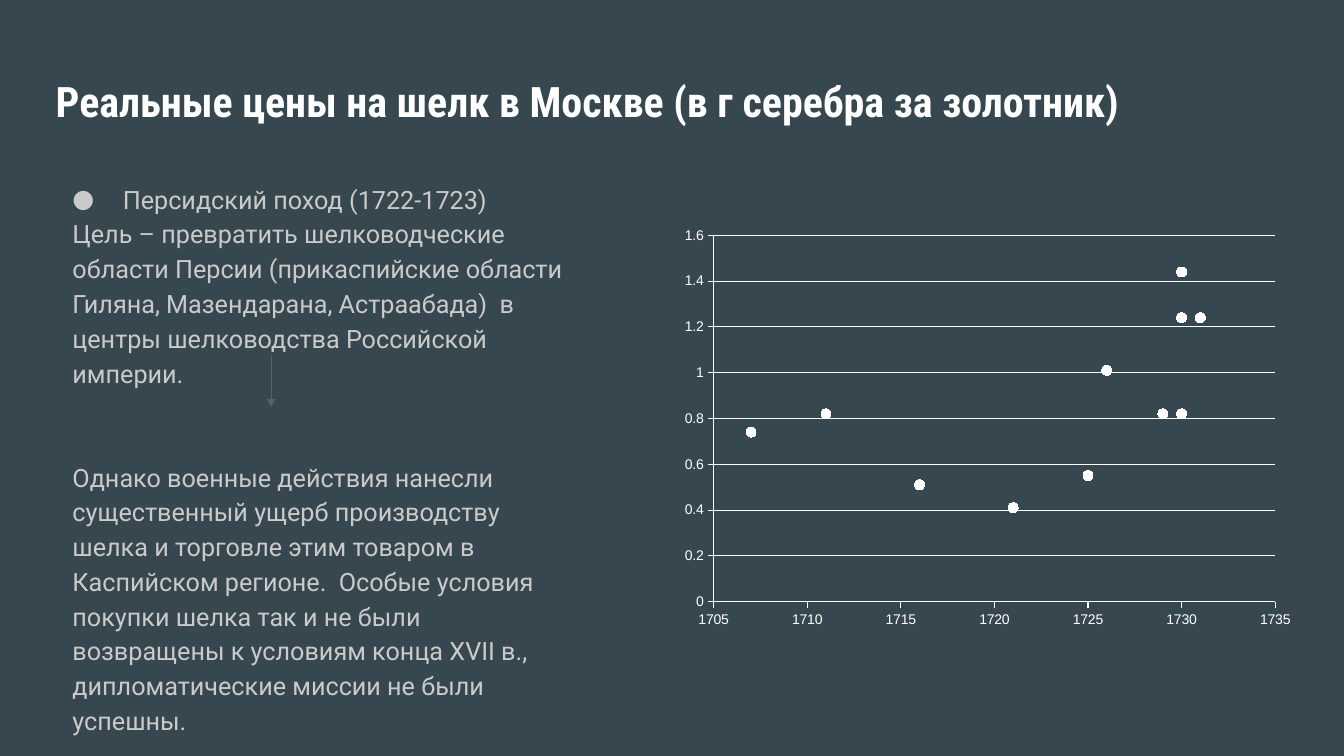
from lxml.etree import SubElement
from pptx import Presentation
from pptx.chart.data import XyChartData
from pptx.dml.color import RGBColor
from pptx.enum.chart import XL_CHART_TYPE, XL_MARKER_STYLE, XL_TICK_MARK
from pptx.enum.shapes import MSO_CONNECTOR
from pptx.oxml import parse_xml
from pptx.oxml.ns import nsdecls, qn
from pptx.util import Pt

COLORS = {"background": "37474F", "white": "FFFFFF", "body": "CACACA", "arrow": "5F5F5F"}

TITLE = "Реальные цены на шелк в Москве (в г серебра за золотник)"
CAMPAIGN = "Персидский поход (1722-1723)"
GOAL = ("Цель – превратить шелководческие области Персии (прикаспийские области "
        "Гиляна, Мазендарана, Астраабада)  в центры шелководства Российской империи.")
OUTCOME = ("Однако военные действия нанесли существенный ущерб производству шелка "
           "и торговле этим товаром в Каспийском регионе.  Особые условия покупки "
           "шелка так и не были возвращены к условиям конца XVII в., "
           "дипломатические миссии не были успешны.")
YEARS = range(1707, 1732)
PRICES = {
    "Series 1": {1707: 0.74, 1711: 0.82, 1716: 0.51, 1721: 0.41, 1725: 0.55,
                 1726: 1.01, 1729: 0.82, 1730: 0.82, 1731: 1.24},
    "Series 2": {1730: 1.24},
    "Series 3": {1730: 1.44},
}


def rgb(name):
    return RGBColor.from_string(COLORS[name])


class SlideBuilder:
    def __init__(self, prs):
        self.s = prs.slides.add_slide(prs.slide_layouts[6])
        fill = self.s.background.fill
        fill.solid()
        fill.fore_color.rgb = rgb("background")

    def text(self, box, paragraphs, font, size, color, bold=False, spacing=1.0):
        """Add a text box; each paragraph is (text, left margin, indent, space before, bullet)."""
        tf = self.s.shapes.add_textbox(*map(Pt, box)).text_frame
        tf.word_wrap = True
        tf.margin_left = tf.margin_right = tf.margin_top = tf.margin_bottom = Pt(7.2)
        for i, (text, left, indent, before, bullet) in enumerate(paragraphs):
            p = tf.add_paragraph() if i else tf.paragraphs[0]
            p.text = text
            p.line_spacing = spacing
            p.space_before = Pt(before)
            pPr = p._p.get_or_add_pPr()
            pPr.set("marL", str(Pt(left)))
            pPr.set("indent", str(Pt(indent)))
            if bullet:
                clr = SubElement(pPr, qn("a:buClr"))
                SubElement(clr, qn("a:srgbClr"), val=COLORS[color])
                SubElement(pPr, qn("a:buFont"), typeface=font)
                SubElement(pPr, qn("a:buChar"), char=bullet)
            for r in p.runs:
                r.font.name = font
                r.font.size = Pt(size)
                r.font.bold = bold
                r.font.color.rgb = rgb(color)

    def scatter(self, box, years, series, plot, x_scale, y_scale):
        """Add a scatter chart; plot holds the inner plot area as fractions of the frame."""
        data = XyChartData()
        for name, prices in series.items():
            xy = data.add_series(name)
            for year in years:
                xy.add_data_point(year, prices.get(year))
        chart = self.s.shapes.add_chart(XL_CHART_TYPE.XY_SCATTER, *map(Pt, box), data).chart
        self.clear_missing(chart)
        chart.has_legend = chart.has_title = False
        chart.font.name, chart.font.size = "Arial", Pt(10)
        chart.font.color.rgb = rgb("white")
        chart.plots[0].vary_by_categories = False
        for xy in chart.plots[0].series:
            xy.smooth = False
            xy.format.line.fill.background()
            xy.marker.style, xy.marker.size = XL_MARKER_STYLE.CIRCLE, 7
            xy.marker.format.fill.solid()
            xy.marker.format.fill.fore_color.rgb = rgb("white")
            xy.marker.format.line.color.rgb = rgb("white")
        for axis, scale in ((chart.category_axis, x_scale), (chart.value_axis, y_scale)):
            axis.minimum_scale, axis.maximum_scale, axis.major_unit = scale
            axis.major_tick_mark = XL_TICK_MARK.OUTSIDE
            axis.minor_tick_mark = XL_TICK_MARK.NONE
            axis.tick_labels.number_format = "General"
            axis.tick_labels.number_format_is_linked = False
            axis.format.line.color.rgb = rgb("white")
            axis.format.line.width = Pt(0.75)
        chart.category_axis.has_major_gridlines = False
        chart.value_axis.has_major_gridlines = True
        grid = chart.value_axis.major_gridlines.format.line
        grid.color.rgb, grid.width = rgb("white"), Pt(0.75)
        self.place_plot(chart, plot)

    def clear_missing(self, chart):
        """Leave years without a price empty."""
        for pt in list(chart._chartSpace.iter(qn("c:pt"))):
            if pt.findtext(qn("c:v")) == "None":
                pt.getparent().remove(pt)

    def place_plot(self, chart, plot):
        area = chart._chartSpace.chart.plotArea
        for old in area.findall(qn("c:layout")):
            area.remove(old)
        sizes = "".join(f'<c:{key} val="{val}"/>' for key, val in zip("xywh", plot))
        area.insert(0, parse_xml(
            f'<c:layout {nsdecls("c")}><c:manualLayout><c:layoutTarget val="inner"/>'
            f'<c:xMode val="edge"/><c:yMode val="edge"/>{sizes}</c:manualLayout></c:layout>'))

    def arrow(self, x1, y1, x2, y2, color, width):
        sp = self.s.shapes.add_connector(MSO_CONNECTOR.STRAIGHT, *map(Pt, (x1, y1, x2, y2)))
        sp.line.color.rgb = rgb(color)
        sp.line.width = Pt(width)
        SubElement(sp.line._get_or_add_ln(), qn("a:tailEnd"), type="triangle")
        SubElement(sp._element.spPr, qn("a:effectLst"))


def main():
    prs = Presentation()
    prs.slide_width, prs.slide_height = Pt(960), Pt(540)
    slide = SlideBuilder(prs)
    slide.text((32.7, 46.8, 894, 60.5), [(TITLE, 0, 0, 0, None)],
               "Roboto Condensed", 30, "white", bold=True)
    slide.text((32.7, 121, 379.5, 297.4),
               [(CAMPAIGN, 48, -36, 0, "●"), (GOAL, 12, 0, 0, None), (OUTCOME, 12, 0, 49.5, None)],
               "Roboto", 18, "body", spacing=1.15)
    slide.scatter((480.5, 156.2, 450.7, 297.4), YEARS, PRICES, (0.065, 0.04, 0.89, 0.88),
                  (1705, 1735, 5), (0, 1.6, 0.2))
    slide.arrow(193.7, 253.4, 193.7, 290.9, "arrow", 0.75)
    prs.save("out.pptx")


if __name__ == "__main__":
    main()
